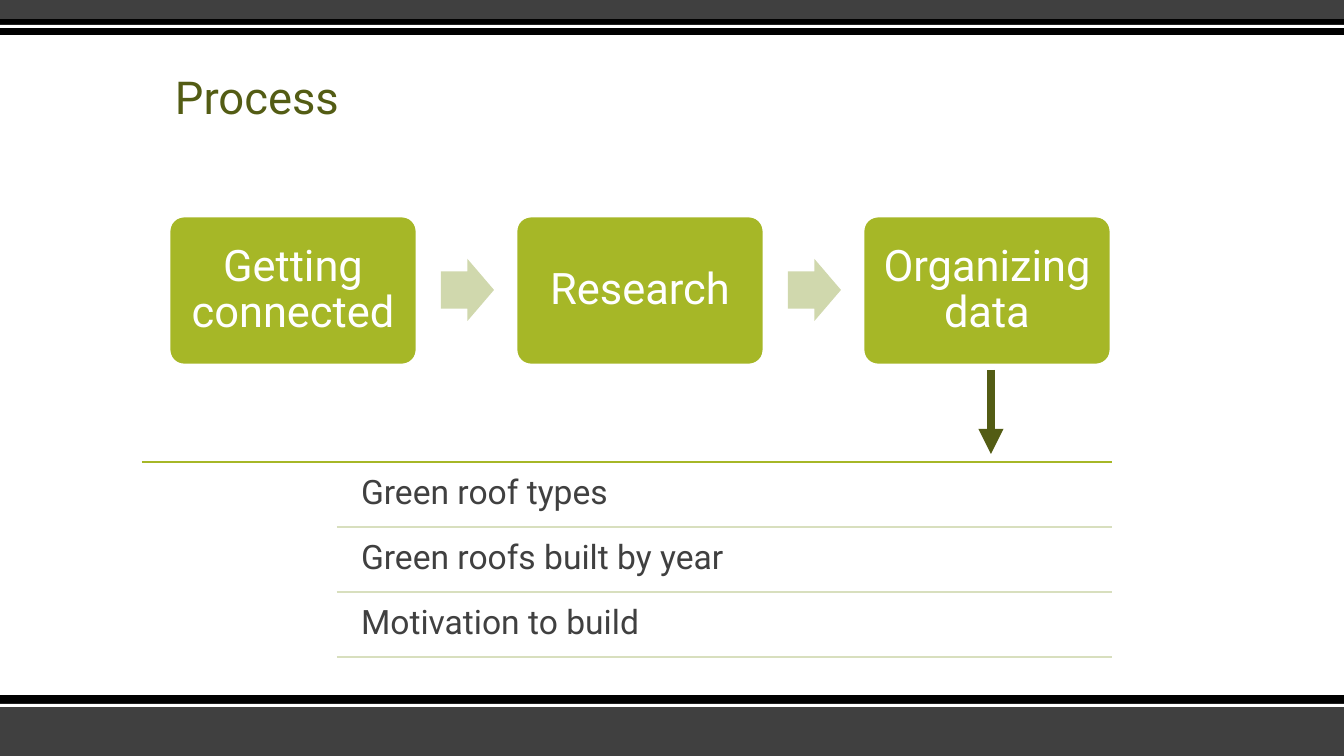
from lxml.etree import SubElement
from pptx import Presentation
from pptx.dml.color import RGBColor
from pptx.enum.shapes import MSO_CONNECTOR, MSO_SHAPE
from pptx.enum.text import MSO_ANCHOR, PP_ALIGN
from pptx.oxml.ns import qn
from pptx.util import Pt

EMU_PER_PX = 914400 / 100.8

WHITE = RGBColor(0xFF, 0xFF, 0xFF)
BLACK = RGBColor(0x00, 0x00, 0x00)
CHARCOAL = RGBColor(0x40, 0x40, 0x40)
OLIVE = RGBColor(0x53, 0x5C, 0x14)
GREEN = RGBColor(0xA6, 0xB7, 0x27)
PALE_GREEN = RGBColor(0xD0, 0xD8, 0xAD)
RULE_GREEN = RGBColor(0xD8, 0xDF, 0xBE)

BANDS = [  # top, height, colour
    (706, 50, CHARCOAL), (695, 11, BLACK), (704, 3, WHITE),
    (0, 19, CHARCOAL), (19, 16, BLACK), (25, 3, WHITE),
]
STEPS = ["Getting connected", "Research", "Organizing data"]
TOPICS = ["Green roof types", "Green roofs built by year", "Motivation to build"]

STEP_LEFT, STEP_PITCH = 169, 347
ARROW_LEFT = 441
LIST_TOP, ROW_PITCH = 462, 65
LIST_RIGHT = 1112


def px(length):
    return round(length * EMU_PER_PX)


def write_text(shape, text, *, size, color, align=PP_ALIGN.LEFT,
               anchor=MSO_ANCHOR.TOP, inset=10, font_name="Roboto"):
    frame = shape.text_frame
    frame.word_wrap = True
    frame.vertical_anchor = anchor
    frame.margin_left = frame.margin_right = px(inset)
    frame.margin_top = frame.margin_bottom = px(inset)
    paragraph = frame.paragraphs[0]
    paragraph.text = text
    paragraph.alignment = align
    paragraph.line_spacing = 0.9
    paragraph.font.name = font_name
    paragraph.font.size = Pt(size)
    paragraph.font.color.rgb = color


class SlideBuilder:
    """Adds elements, measured in px, to one slide."""

    def __init__(self, slide):
        self.shapes = slide.shapes

    def shape(self, kind, left, top, width, height, fill, adjustments=(), outline=None):
        shape = self.shapes.add_shape(kind, px(left), px(top), px(width), px(height))
        shape.shadow.inherit = False
        shape.fill.solid()
        shape.fill.fore_color.rgb = fill
        for index, value in enumerate(adjustments):
            shape.adjustments[index] = value
        if outline is None:
            shape.line.fill.background()
        else:
            shape.line.color.rgb = outline
            shape.line.width = Pt(2)
        return shape

    def text(self, text, left, top, width, height, **style):
        box = self.shapes.add_textbox(px(left), px(top), px(width), px(height))
        write_text(box, text, **style)

    def line(self, start, end, color, weight=2, arrow=False):
        connector = self.shapes.add_connector(
            MSO_CONNECTOR.STRAIGHT, *map(px, start), *map(px, end))
        connector.line.color.rgb = color
        connector.line.width = Pt(weight)
        if arrow:
            SubElement(connector.line._get_or_add_ln(), qn("a:tailEnd"), type="triangle")
        SubElement(connector._element.spPr, qn("a:effectLst"))


def main():
    presentation = Presentation()
    presentation.slide_width, presentation.slide_height = px(1344), px(756)
    builder = SlideBuilder(presentation.slides.add_slide(presentation.slide_layouts[6]))

    for top, height, color in BANDS:
        builder.shape(MSO_SHAPE.RECTANGLE, 0, top, 1344, height, color)

    builder.text("Process", 168, 68, 1008, 66, size=32.4, color=OLIVE, inset=7)

    for index, step in enumerate(STEPS):
        offset = index * STEP_PITCH
        card = builder.shape(MSO_SHAPE.ROUNDED_RECTANGLE, STEP_LEFT + offset, 216,
                             248, 149, GREEN, adjustments=[0.1], outline=WHITE)
        write_text(card, step, size=31, color=WHITE, align=PP_ALIGN.CENTER,
                   anchor=MSO_ANCHOR.MIDDLE, inset=13)
        if index < len(STEPS) - 1:
            builder.shape(MSO_SHAPE.RIGHT_ARROW, ARROW_LEFT + offset, 259, 53, 62,
                          PALE_GREEN, adjustments=[0.6, 0.5])

    builder.line((142, LIST_TOP), (LIST_RIGHT, LIST_TOP), GREEN)
    for index, topic in enumerate(TOPICS):
        top = LIST_TOP + index * ROW_PITCH
        builder.text(topic, 351, top + 3, 760, 61, size=24, color=CHARCOAL)
        bottom = top + ROW_PITCH
        builder.line((337, bottom), (LIST_RIGHT, bottom), RULE_GREEN)

    builder.line((991, 370), (991, 454), OLIVE, weight=6, arrow=True)

    presentation.save("out.pptx")


if __name__ == "__main__":
    main()
